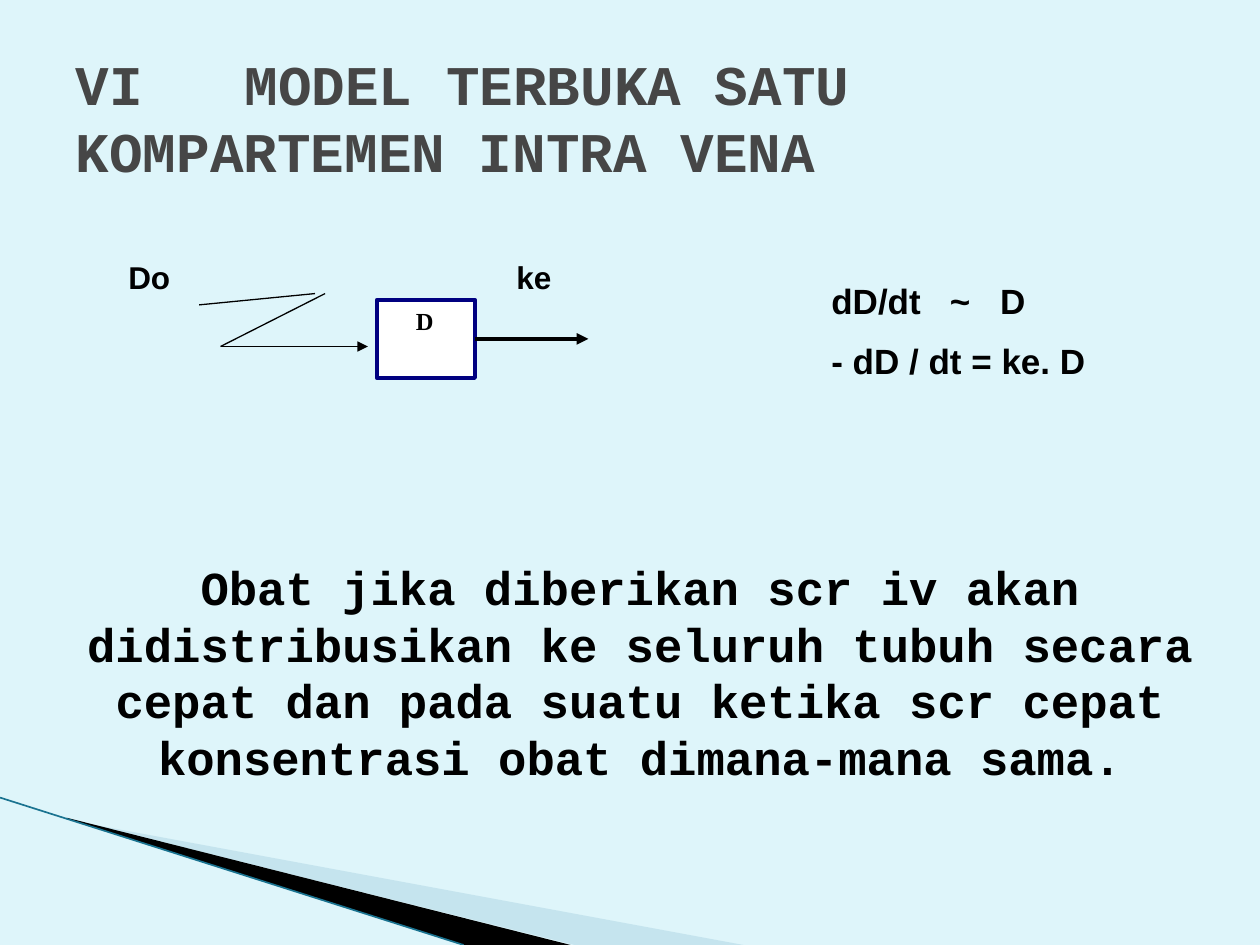
"""Build the slide on the one-compartment open model for intravenous dosing."""
import dataclasses
import typing

import lxml.etree
import pptx
import pptx.dml.color
import pptx.enum.shapes
import pptx.enum.text
import pptx.oxml
import pptx.oxml.ns
import pptx.util

Inches = pptx.util.Inches
Align = pptx.enum.text.PP_ALIGN
AutoSize = pptx.enum.text.MSO_AUTO_SIZE
COLORS = {
    "background": "DEF5FA", "title": "464646", "ink": "000000", "box": "FFFFFF",
    "border": "000080", "pale": "A0CBDC", "edge": "1A7390",
}


@dataclasses.dataclass
class Wedge:
    points: list[tuple[float, float]]
    color: str
    opacity: int = 100


@dataclasses.dataclass
class Line:
    start: tuple[float, float]
    end: tuple[float, float]
    width: float = 0.75
    color: str = "ink"
    arrow: bool = False


@dataclasses.dataclass
class Label:
    box: tuple[float, float, float, float]
    lines: list[str]
    size: int
    tabs: tuple[float, ...] = ()


WEDGES = [
    Wedge([(0.55, 6.5), (0.55, 6.51), (5.9, 7.5), (4.56, 7.5)], "pale", 40),
    Wedge([(0.53, 6.49), (4.53, 7.5), (3.68, 7.5), (0.54, 6.5)], "ink"),
]
EDGE = Line((0, 6.33), (3.68, 7.5), 0.95, "edge")
DOSE_LINES = [
    Line((1.58, 2.42), (2.5, 2.33)),
    Line((1.75, 2.75), (2.58, 2.33)),
    Line((1.75, 2.75), (2.92, 2.75), arrow=True),
]
ELIMINATION = Line((3.77, 2.69), (4.67, 2.69), 2.25, arrow=True)
LABELS = [
    Label((0.92, 2, 0.67, 0.4), ["Do"], 18),
    Label((4, 2, 0.5, 0.4), ["ke"], 18),
    Label((6.5, 2.17, 2.5, 0.93), ["dD/dt\t~\tD", "- dD / dt = ke. D"], 20, (0.94, 1.34)),
]


def rgb(name: str) -> pptx.dml.color.RGBColor:
    """Return a named colour."""
    return pptx.dml.color.RGBColor.from_string(COLORS[name])


def write(paragraph: typing.Any, text: str, *, font: str, size: float, color: str = "ink",
          align: Align = Align.LEFT, before: float = 0, tabs: tuple[float, ...] = ()) -> None:
    """Write bold formatted text into a paragraph."""
    paragraph.alignment = align
    paragraph.space_before = pptx.util.Pt(before)
    if tabs:
        properties = paragraph._p.get_or_add_pPr()
        tab_list = lxml.etree.SubElement(properties, pptx.oxml.ns.qn("a:tabLst"))
        for position in tabs:
            lxml.etree.SubElement(tab_list, pptx.oxml.ns.qn("a:tab"),
                                  pos=str(Inches(position)), algn="l")
    run = paragraph.add_run()
    run.text = text
    run.font.name = font
    run.font.size = pptx.util.Pt(size)
    run.font.bold = True
    run.font.color.rgb = rgb(color)


def place(shape: typing.Any, box: tuple[float, float, float, float]) -> None:
    """Move and size a shape in inches."""
    shape.left, shape.top, shape.width, shape.height = map(Inches, box)


def add_wedge(slide: typing.Any, wedge: Wedge) -> None:
    """Draw one filled corner wedge."""
    points = [(Inches(x), Inches(y)) for x, y in wedge.points]
    builder = slide.shapes.build_freeform(*points[0], scale=1.0)
    builder.add_line_segments(points[1:], close=True)
    shape = builder.convert_to_shape()
    shape.shadow.inherit = False
    shape.fill.solid()
    shape.fill.fore_color.rgb = rgb(wedge.color)
    shape.line.fill.background()
    if wedge.opacity < 100:
        color = shape._element.spPr.find(".//" + pptx.oxml.ns.qn("a:srgbClr"))
        lxml.etree.SubElement(color, pptx.oxml.ns.qn("a:alpha"), val=str(wedge.opacity * 1000))


def add_line(slide: typing.Any, line: Line) -> typing.Any:
    """Draw one straight line, with an arrowhead if asked."""
    connector = slide.shapes.add_connector(
        pptx.enum.shapes.MSO_CONNECTOR.STRAIGHT, *map(Inches, line.start + line.end))
    connector.line.color.rgb = rgb(line.color)
    connector.line.width = pptx.util.Pt(line.width)
    if line.arrow:
        lxml.etree.SubElement(connector.line._get_or_add_ln(),
                              pptx.oxml.ns.qn("a:tailEnd"), type="triangle")
    lxml.etree.SubElement(connector._element.spPr, pptx.oxml.ns.qn("a:effectLst"))
    return connector


def add_label(slide: typing.Any, label: Label) -> None:
    """Add a text box with one paragraph per line."""
    frame = slide.shapes.add_textbox(*map(Inches, label.box)).text_frame
    frame.word_wrap = True
    frame.auto_size = AutoSize.SHAPE_TO_FIT_TEXT
    for index, text in enumerate(label.lines):
        paragraph = frame.add_paragraph() if index else frame.paragraphs[0]
        write(paragraph, text, font="Arial", size=label.size,
              before=label.size / 2 if index else 0, tabs=label.tabs)


def add_compartment(slide: typing.Any) -> typing.Any:
    """Draw the compartment box."""
    shape = slide.shapes.add_shape(pptx.enum.shapes.MSO_SHAPE.RECTANGLE,
                                   *map(Inches, (2.99, 2.38, 0.78, 0.62)))
    shape.shadow.inherit = False
    shape.fill.solid()
    shape.fill.fore_color.rgb = rgb("box")
    shape.line.color.rgb = rgb("border")
    shape.line.width = pptx.util.Pt(2.25)
    frame = shape.text_frame
    frame.vertical_anchor = pptx.enum.text.MSO_ANCHOR.TOP
    frame.margin_left = Inches(0.31)
    write(frame.paragraphs[0], "D", font="Times New Roman", size=14)
    return shape


def fill_placeholders(slide: typing.Any) -> None:
    """Place and fill the title and the body."""
    title, body = slide.placeholders[0], slide.placeholders[1]
    place(title, (0.5, 0.3, 9, 1.25))
    place(body, (0.58, 4.38, 9, 2.37))
    for placeholder in (title, body):
        placeholder.text_frame.word_wrap = True
        placeholder.text_frame.auto_size = AutoSize.NONE
    title.text_frame.vertical_anchor = pptx.enum.text.MSO_ANCHOR.MIDDLE
    write(title.text_frame.paragraphs[0], "VI\tMODEL TERBUKA SATU KOMPARTEMEN INTRA VENA",
          font="Courier New", size=32, color="title", tabs=(1.34,))
    paragraph = body.text_frame.paragraphs[0]
    write(paragraph, "Obat jika diberikan scr iv akan didistribusikan ke seluruh tubuh secara "
          "cepat dan pada suatu ketika scr cepat konsentrasi obat dimana-mana sama.",
          font="Courier New", size=27, align=Align.CENTER)
    properties = paragraph._p.get_or_add_pPr()
    properties.set("marL", "0")
    properties.set("indent", "0")
    lxml.etree.SubElement(properties, pptx.oxml.ns.qn("a:buNone"))


def main() -> None:
    """Build and save the presentation."""
    presentation = pptx.Presentation()
    presentation.slide_width, presentation.slide_height = Inches(10), Inches(7.5)
    slide = presentation.slides.add_slide(presentation.slide_layouts[1])
    slide.background.fill.solid()
    slide.background.fill.fore_color.rgb = rgb("background")
    fill_placeholders(slide)
    for wedge in WEDGES:
        add_wedge(slide, wedge)
    add_line(slide, EDGE)
    compartment = add_compartment(slide)
    for line in DOSE_LINES:
        add_line(slide, line)
    add_line(slide, ELIMINATION).begin_connect(compartment, 3)
    for label in LABELS:
        add_label(slide, label)
    presentation.save("out.pptx")


if __name__ == "__main__":
    main()
